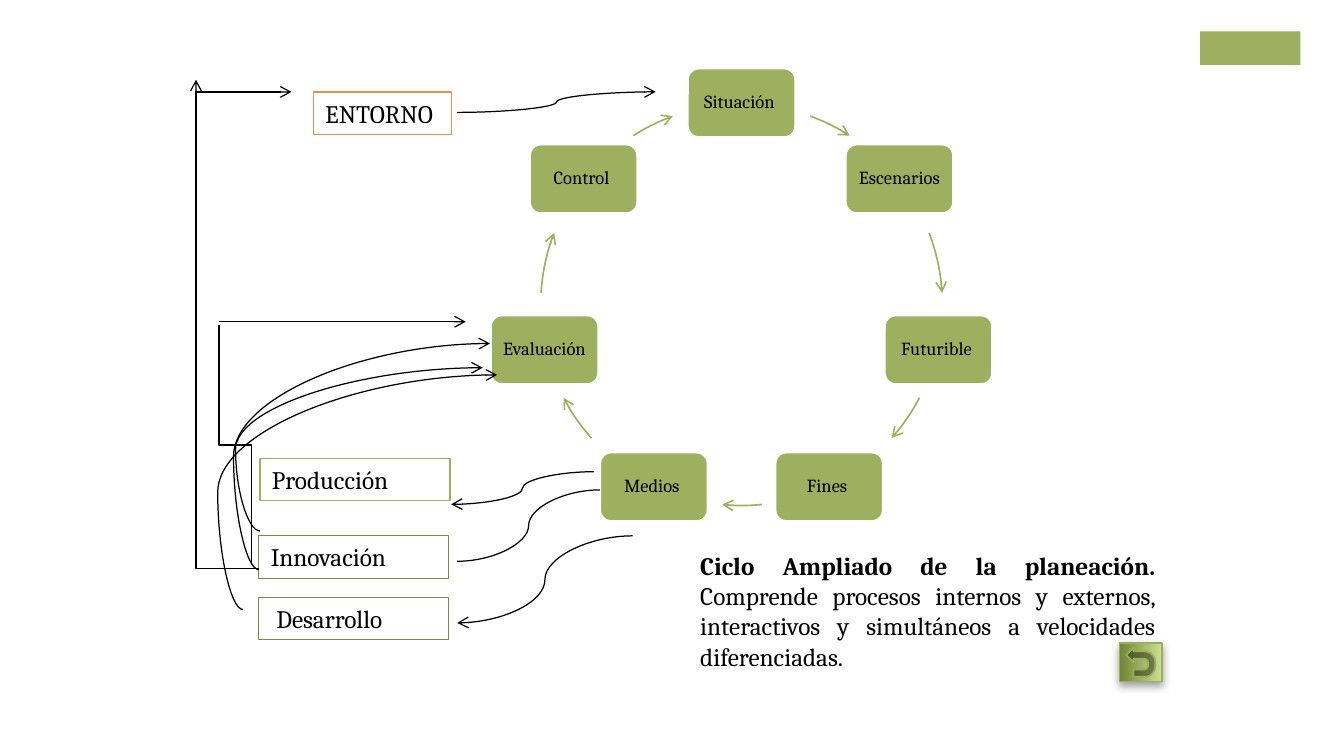
from math import cos, radians, sin

from lxml.etree import SubElement
from pptx import Presentation
from pptx.dml.color import RGBColor
from pptx.enum.shapes import MSO_CONNECTOR, MSO_SHAPE
from pptx.enum.text import MSO_ANCHOR, MSO_AUTO_SIZE, PP_ALIGN
from pptx.oxml.ns import qn
from pptx.util import Inches, Pt

# The slide is a square grid: 111.1 columns by 62.5 rows.
CELL = Inches(0.1)
COLUMNS, ROWS = 111.1, 62.5
FONT = "Cambria"
COLORS = {
    "green": "9EB060", "olive": "798844", "orange": "DA9551",
    "black": "000000", "white": "FFFFFF", "shadow": "808080",
    "button_dark": "718433", "button_light": "CBDF93", "button_line": "9CAE5C",
}

CYCLE_CENTER = (61.3, 25.2)
CYCLE_RADIUS = 16.7
ARROW_RADIUS = 16.6
STAGE_SIZE = (9, 5.8)
STAGES = ["Situación ", "Escenarios", "Futurible ", "Fines ", "Medios ",
          "Evaluación ", "Control "]
# Clockwise degrees from the top; the left half mirrors the right half.
RIGHT_ARCS = [(20, 32.6), (69, 86.6), (117.6, 131.6)]
ARCS = (RIGHT_ARCS + [(174.1, 185.5)]
        + [(360 - end, 360 - start) for start, end in reversed(RIGHT_ARCS)])

LABELS = [
    (" Desarrollo", 21.4, 49.4, 15.7, "olive"),
    ("Producción", 21.5, 37.9, 15.7, "green"),
    ("Innovación", 21.4, 44.3, 15.7, "olive"),
    ("ENTORNO", 25.9, 7.6, 11.4, "orange"),
]
# Start, end, position of the bend, arrowhead
CURVES = [
    ((52.3, 44.3), (37.8, 51.5), 0.5, True),
    ((49.1, 39), (37.3, 41.7), 0.5, True),
    ((49.6, 40.5), (37.8, 46.4), 0.5, False),
    ((37.8, 9.3), (54.2, 7.6), 0.5, True),
    ((20.1, 50.4), (41.1, 31), -0.1, True),
    ((21.4, 47.1), (40.5, 28.4), -0.11, True),
    ((21.5, 43.9), (39.9, 30.4), -0.11, True),
]
STRAIGHT_ARROWS = [((16.2, 7.6), (24.1, 7.6)), ((18.1, 26.6), (38.5, 26.6))]
ENTORNO_ROUTE = [(21.4, 47), (16.2, 47), (16.2, 6.6)]
EVALUATION_ROUTE = [(20.8, 46.6), (20.8, 36.8), (18.1, 36.8), (18.1, 26.9)]


def grid(*lengths):
    return [round(length * CELL) for length in lengths]


def color(name):
    return RGBColor.from_string(COLORS[name])


def set_line(shape, name, width, arrow=False):
    shape.line.color.rgb = color(name)
    shape.line.width = Pt(width)
    if arrow:
        line = shape._element.spPr.find(qn("a:ln"))
        SubElement(line, qn("a:tailEnd"), type="arrow")


def add_box(slide, kind, left, top, width, height, fill=None):
    shape = slide.shapes.add_shape(kind, *grid(left, top, width, height))
    shape.shadow.inherit = False
    if fill:
        shape.fill.solid()
        shape.fill.fore_color.rgb = color(fill)
    else:
        shape.fill.background()
    shape.line.fill.background()
    return shape


def style_paragraph(paragraph, size, alignment):
    paragraph.alignment = alignment
    paragraph.font.name = FONT
    paragraph.font.size = Pt(size)
    paragraph.font.color.rgb = color("black")


def add_stage(slide, text, index):
    angle = radians(index * 360 / len(STAGES))
    width, height = STAGE_SIZE
    left = CYCLE_CENTER[0] + CYCLE_RADIUS * sin(angle) - width / 2
    top = CYCLE_CENTER[1] - CYCLE_RADIUS * cos(angle) - height / 2
    stage = add_box(slide, MSO_SHAPE.ROUNDED_RECTANGLE, left, top, width, height, "green")
    set_line(stage, "white", 2)
    frame = stage.text_frame
    frame.margin_left = frame.margin_right = Inches(0.08)
    frame.margin_top = frame.margin_bottom = Inches(0.08)
    frame.vertical_anchor = MSO_ANCHOR.MIDDLE
    frame.text = text
    style_paragraph(frame.paragraphs[0], 11, PP_ALIGN.CENTER)
    frame.paragraphs[0].line_spacing = 0.9


def add_route(slide, points, line, width, arrow):
    """Draw an open outline through the given grid points."""
    start, *others = [grid(*point) for point in points]
    builder = slide.shapes.build_freeform(*start)
    builder.add_line_segments(others, close=False)
    route = builder.convert_to_shape()
    route.shadow.inherit = False
    route.fill.background()
    set_line(route, line, width, arrow)


def add_arc(slide, start, end, steps=12):
    angles = [radians(start + (end - start) * step / steps) for step in range(steps + 1)]
    points = [(CYCLE_CENTER[0] + ARROW_RADIUS * sin(angle),
               CYCLE_CENTER[1] - ARROW_RADIUS * cos(angle)) for angle in angles]
    add_route(slide, points, "green", 1, True)


def add_label(slide, text, left, top, width, line):
    label = add_box(slide, MSO_SHAPE.RECTANGLE, left, top, width, 3.5)
    set_line(label, line, 0.75)
    frame = label.text_frame
    frame.auto_size = MSO_AUTO_SIZE.SHAPE_TO_FIT_TEXT
    frame.vertical_anchor = MSO_ANCHOR.TOP
    frame.text = text
    style_paragraph(frame.paragraphs[0], 15, PP_ALIGN.LEFT)


def add_link(slide, kind, start, end, arrow=True):
    link = slide.shapes.add_connector(kind, *grid(*start, *end))
    set_line(link, "black", 0.75, arrow)
    SubElement(link._element.spPr, qn("a:effectLst"))
    return link


def add_curve(slide, start, end, bend, arrow):
    curve = add_link(slide, MSO_CONNECTOR.CURVE, start, end, arrow)
    geometry = curve._element.spPr.find(qn("a:prstGeom"))
    guides = geometry.find(qn("a:avLst"))
    if guides is None:
        guides = SubElement(geometry, qn("a:avLst"))
    SubElement(guides, qn("a:gd"), name="adj1", fmla=f"val {round(bend * 100000)}")


def add_description(slide):
    box = slide.shapes.add_textbox(*grid(56.9, 45, 39.6, 11.1))
    frame = box.text_frame
    frame.word_wrap = True
    frame.auto_size = MSO_AUTO_SIZE.SHAPE_TO_FIT_TEXT
    paragraph = frame.paragraphs[0]
    style_paragraph(paragraph, 15, PP_ALIGN.JUSTIFY)
    title = paragraph.add_run()
    title.text = "Ciclo Ampliado de la planeación. "
    title.font.bold = True
    paragraph.add_run().text = ("Comprende procesos internos y externos, interactivos "
                                "y simultáneos a velocidades diferenciadas. ")


def add_return_button(slide):
    button = add_box(slide, MSO_SHAPE.ACTION_BUTTON_RETURN, 92.7, 53, 3.2, 3.5)
    button.rotation = 270
    button.fill.gradient()
    button.fill.gradient_angle = 270
    for stop, name in zip(button.fill.gradient_stops, ("button_dark", "button_light")):
        stop.color.rgb = color(name)
    set_line(button, "button_line", 1)
    effects = button._element.spPr.find(qn("a:effectLst"))
    shadow = SubElement(effects, qn("a:outerShdw"), blurRad=str(Pt(5)),
                        dist=str(Pt(2)), dir="5400000", rotWithShape="0")
    tone = SubElement(shadow, qn("a:srgbClr"), val=COLORS["shadow"])
    SubElement(tone, qn("a:alpha"), val="75000")


def main():
    presentation = Presentation()
    presentation.slide_width, presentation.slide_height = grid(COLUMNS, ROWS)
    slide = presentation.slides.add_slide(presentation.slide_layouts[6])
    add_box(slide, MSO_SHAPE.RECTANGLE, 99.2, 2.6, 8.3, 2.8, "green")
    for index, (text, arc) in enumerate(zip(STAGES, ARCS)):
        add_stage(slide, text, index)
        add_arc(slide, *arc)
    for label in LABELS:
        add_label(slide, *label)
    for curve in CURVES:
        add_curve(slide, *curve)
    for start, end in STRAIGHT_ARROWS:
        add_link(slide, MSO_CONNECTOR.STRAIGHT, start, end)
    add_route(slide, ENTORNO_ROUTE, "black", 0.75, True)
    add_route(slide, EVALUATION_ROUTE, "black", 0.75, False)
    add_description(slide)
    add_return_button(slide)
    presentation.save("out.pptx")


if __name__ == "__main__":
    main()
